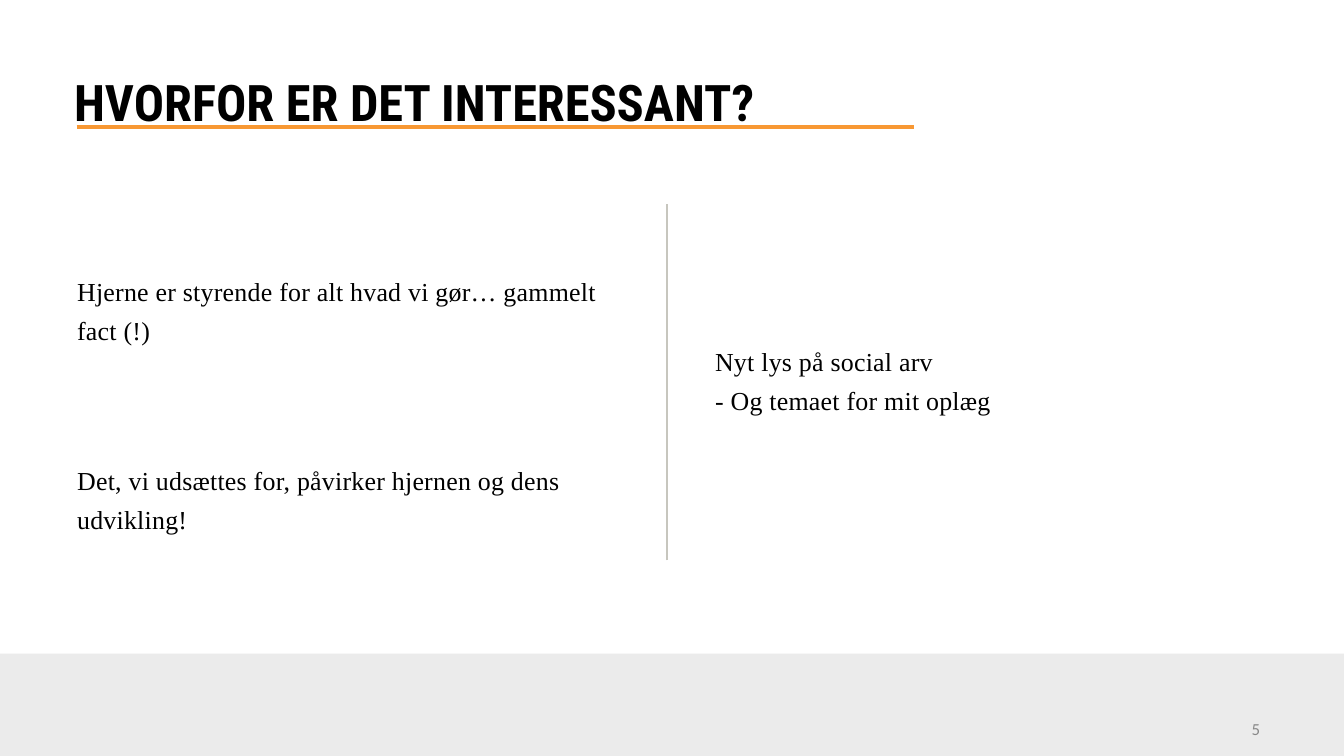
from dataclasses import dataclass
from typing import Optional

from pptx import Presentation
from pptx.dml.color import RGBColor
from pptx.enum.shapes import MSO_CONNECTOR, MSO_SHAPE
from pptx.enum.text import MSO_ANCHOR, MSO_AUTO_SIZE, PP_ALIGN
from pptx.oxml.ns import qn
from pptx.util import Inches, Pt


@dataclass
class Style:
    font: str
    size: float
    color: str = "000000"
    bold: bool = False
    tracking: float = 0
    line_spacing: float = 1.0
    gap: float = 0


@dataclass
class TextBlock:
    box: tuple[float, float, float, float]
    paragraphs: list[str]
    style: Style
    inset: float = 0.08
    top_inset: float = 0.08
    anchor: MSO_ANCHOR = MSO_ANCHOR.TOP
    wrap: bool = True


@dataclass
class Rule:
    start: tuple[float, float]
    end: tuple[float, float]
    color: str
    width: float


TITLE = Style("Roboto Condensed", 72, bold=True)
BODY = Style("Times New Roman", 37, tracking=0.4, line_spacing=1.25)
SPACED_BODY = Style("Times New Roman", 37, tracking=0.4, line_spacing=1.25, gap=160)
NUMBER = Style("Calibri", 24, "888888", tracking=0.2, line_spacing=1.3)

HEADING = TextBlock((1.39, 1.34, 18.72, 1.53), ["HVORFOR ER DET INTERESSANT?"], TITLE)
COLUMNS = [
    TextBlock(
        (1.45, 3.71, 10.63, 6.88),
        [
            "Hjerne er styrende for alt hvad vi gør… gammelt fact (!)",
            "Det, vi udsættes for, påvirker hjernen og dens udvikling!",
        ],
        SPACED_BODY,
        top_inset=1.6,
    ),
    TextBlock(
        (14.11, 3.63, 10.63, 4.64),
        ["Nyt lys på social arv", "- Og temaet for mit oplæg"],
        BODY,
        top_inset=3.08,
    ),
]
PAGE_NUMBER = TextBlock(
    (24.74, 14, 0.63, 0.81), ["5"], NUMBER, 0.1, 0.1, MSO_ANCHOR.MIDDLE, False
)
RULES = [
    Rule((1.52, 2.52), (18.14, 2.52), "F89833", 7),
    Rule((13.24, 11.12), (13.24, 4.05), "C7C6BE", 2),
]


def rgb(color: str) -> RGBColor:
    return RGBColor.from_string(color)


def add_run(p, text: str, style: Style) -> None:
    r = p.add_run()
    r.text = text
    r.font.name = style.font
    r.font.size = Pt(style.size)
    r.font.bold = style.bold
    r.font.color.rgb = rgb(style.color)
    if style.tracking:
        r._r.get_or_add_rPr().set("spc", str(round(style.tracking * 100)))


def fill_text(sp, block: TextBlock) -> None:
    sp.left, sp.top, sp.width, sp.height = map(Inches, block.box)
    tf = sp.text_frame
    tf.word_wrap = block.wrap
    tf.auto_size = MSO_AUTO_SIZE.NONE
    tf.vertical_anchor = block.anchor
    tf.margin_left = tf.margin_right = tf.margin_bottom = Inches(block.inset)
    tf.margin_top = Inches(block.top_inset)
    for i, text in enumerate(block.paragraphs):
        p = tf.add_paragraph() if i else tf.paragraphs[0]
        pPr = p._p.get_or_add_pPr()
        pPr.set("marL", "0")
        pPr.set("indent", "0")
        pPr.append(pPr.makeelement(qn("a:buNone"), {}))
        p.alignment = PP_ALIGN.LEFT
        p.line_spacing = block.style.line_spacing
        p.space_before = Pt(block.style.gap if i else 0)
        add_run(p, text, block.style)


def add_band(s, top: float, height: float, width: float, color: str) -> None:
    sp = s.shapes.add_shape(
        MSO_SHAPE.RECTANGLE, 0, Inches(top), Inches(width), Inches(height)
    )
    sp.shadow.inherit = False
    sp.fill.solid()
    sp.fill.fore_color.rgb = rgb(color)
    sp.line.fill.background()


def add_rule(s, rule: Rule) -> None:
    line = s.shapes.add_connector(
        MSO_CONNECTOR.STRAIGHT, *map(Inches, rule.start + rule.end)
    )
    line.line.color.rgb = rgb(rule.color)
    line.line.width = Pt(rule.width)
    spPr = line._element.spPr
    spPr.append(spPr.makeelement(qn("a:effectLst"), {}))


def main() -> None:
    prs = Presentation()
    prs.slide_width, prs.slide_height = Inches(26.67), Inches(15)
    s = prs.slides.add_slide(prs.slide_layouts[3])
    add_band(s, 12.97, 2.07, 26.67, "EBEBEB")
    fill_text(s.shapes.title, HEADING)
    for rule in RULES:
        add_rule(s, rule)
    for index, block in enumerate(COLUMNS, start=1):
        fill_text(s.placeholders[index], block)
    fill_text(s.shapes.add_textbox(0, 0, 0, 0), PAGE_NUMBER)
    prs.save("out.pptx")


if __name__ == "__main__":
    main()
